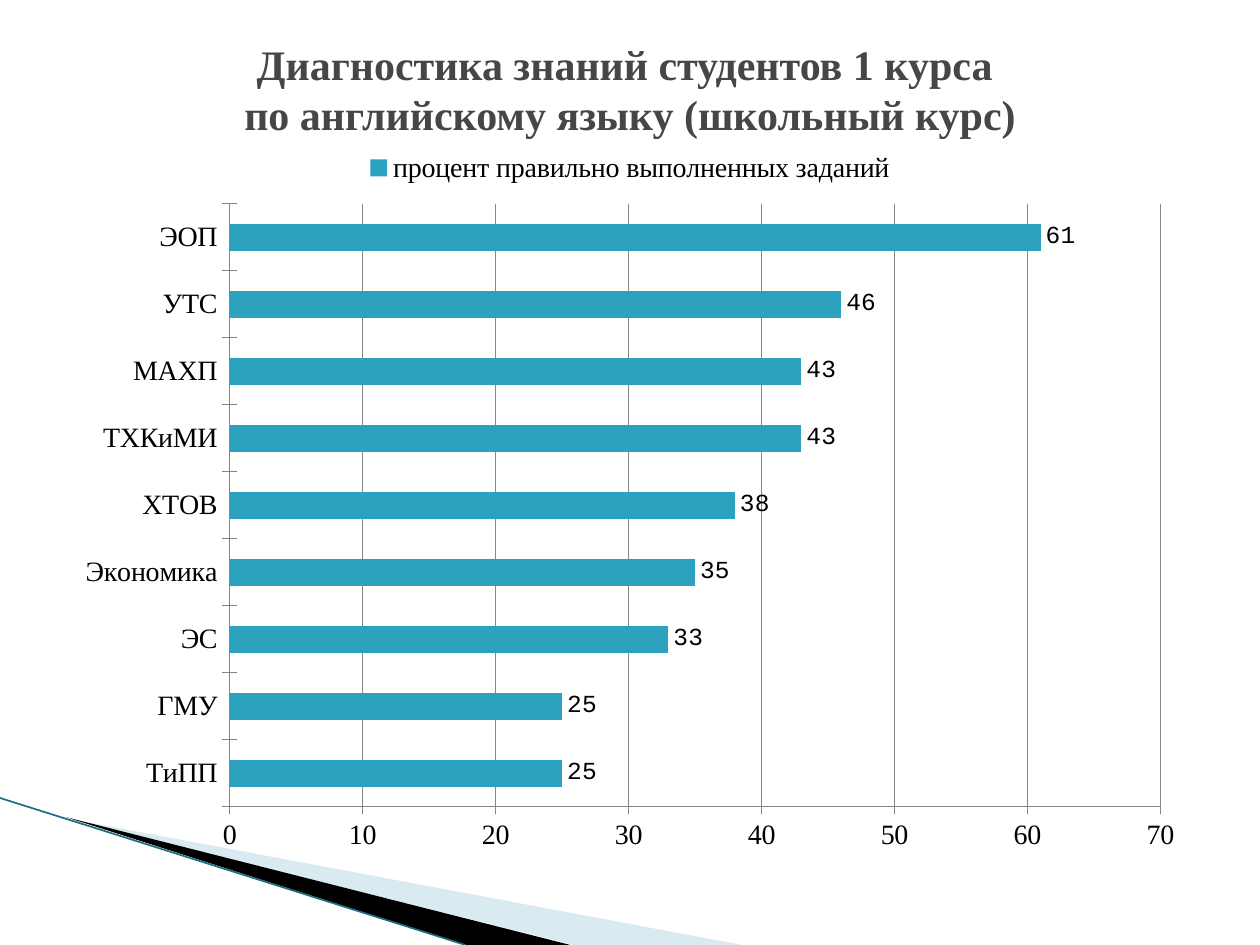
from dataclasses import dataclass
from lxml.etree import SubElement as Sub
from pptx import Presentation
from pptx.chart.data import CategoryChartData as Data
from pptx.dml.color import RGBColor as Rgb
from pptx.enum.chart import XL_CHART_TYPE as Kind, XL_LABEL_POSITION as Spot
from pptx.enum.chart import XL_LEGEND_POSITION as Side, XL_TICK_MARK as Tick
from pptx.enum.shapes import MSO_CONNECTOR as Link
from pptx.enum.text import MSO_ANCHOR as Anchor, PP_ALIGN as Align
from pptx.oxml.ns import qn
from pptx.util import Pt


@dataclass(frozen=True)
class Theme:
    """Hold the colours, fonts and type sizes."""
    ink: str = "000000"
    head: str = "464646"
    bar: str = "2DA2BF"
    grid: str = "868686"
    pale: str = "A0CBDC"
    edge: str = "1B6F83"
    serif: str = "Times New Roman"
    mono: str = "Courier New"
    title: int = 24
    axis: int = 16
    label: int = 14
    base: int = 18


THEME = Theme()
TITLE = "Диагностика знаний студентов 1 курса \vпо английскому языку (школьный курс)"
SERIES = "процент правильно выполненных заданий"
SCORES = {"ТиПП": 25, "ГМУ": 25, "ЭС": 33, "Экономика": 35, "ХТОВ": 38,
          "ТХКиМИ": 43, "МАХП": 43, "УТС": 46, "ЭОП": 61}


def style(font, name, size, color=THEME.ink, bold=False):
    """Set the face, size, colour and weight of a font."""
    font.name, font.size, font.bold = name, Pt(size), bold
    font.color.rgb = Rgb.from_string(color)


def add_wedge(slide, box, points, color, alpha=None):
    """Draw a filled wedge with its points relative to the box."""
    left, top = box[:2]
    spots = [(Pt(left + x), Pt(top + y)) for x, y in points]
    form = slide.shapes.build_freeform(*spots[0])
    form.add_line_segments(spots[1:], close=True)
    shape = form.convert_to_shape()
    shape.shadow.inherit = False
    shape.line.fill.background()
    shape.fill.solid()
    shape.fill.fore_color.rgb = Rgb.from_string(color)
    if alpha:
        tint = shape.fill._xPr.find(".//" + qn("a:srgbClr"))
        Sub(tint, qn("a:alpha")).set("val", str(alpha * 1000))


def add_corner(slide, box):
    """Draw the two wedges and the edge line of the lower corner."""
    left, top, width, height = box
    add_wedge(slide, box, [(40, 12), (width, height), (328, height)], THEME.pale, 40)
    add_wedge(slide, box, [(38, 11), (326, height), (266, height)], THEME.ink)
    line = slide.shapes.add_connector(
        Link.STRAIGHT, Pt(left), Pt(top), Pt(left + 266), Pt(top + height))
    line.line.color.rgb = Rgb.from_string(THEME.edge)
    line.line.width = Pt(0.95)
    Sub(line._element.spPr, qn("a:effectLst"))


def add_title(slide, box):
    """Place the heading in the title placeholder."""
    title = slide.shapes.title
    title.left, title.top, title.width, title.height = map(Pt, box)
    frame = title.text_frame
    frame.text = TITLE
    frame.word_wrap = True
    frame.vertical_anchor = Anchor.MIDDLE
    para = frame.paragraphs[0]
    para.alignment = Align.CENTER
    for run in para.runs:
        style(run.font, THEME.serif, THEME.title, THEME.head, True)


def add_scores(slide, box):
    """Place the bar chart of scores."""
    data = Data()
    data.categories = SCORES.keys()
    data.add_series(SERIES, SCORES.values())
    chart = slide.shapes.add_chart(Kind.BAR_CLUSTERED, *map(Pt, box), data).chart
    style(chart.font, THEME.mono, THEME.base)
    chart.has_title = False
    chart.has_legend = True
    chart.legend.position = Side.TOP
    chart.legend.include_in_layout = False
    style(chart.legend.font, THEME.serif, THEME.axis)
    gray = Rgb.from_string(THEME.grid)
    for axis in (chart.category_axis, chart.value_axis):
        axis.major_tick_mark = Tick.CROSS
        axis.minor_tick_mark = Tick.NONE
        axis.format.line.color.rgb = gray
        style(axis.tick_labels.font, THEME.serif, THEME.axis)
    scale = chart.value_axis
    scale.minimum_scale, scale.maximum_scale, scale.major_unit = 0, 70, 10
    scale.has_major_gridlines = True
    scale.major_gridlines.format.line.color.rgb = gray
    plot = chart.plots[0]
    plot.gap_width = 150
    plot.vary_by_categories = False
    bars = plot.series[0]
    bars.format.fill.solid()
    bars.format.fill.fore_color.rgb = Rgb.from_string(THEME.bar)
    labels = bars.data_labels
    labels.show_value = True
    labels.position = Spot.OUTSIDE_END
    style(labels.font, THEME.mono, THEME.label)


def main():
    """Build the slide and save it."""
    deck = Presentation()
    deck.slide_width, deck.slide_height = Pt(720), Pt(540)
    slide = deck.slides.add_slide(deck.slide_layouts[5])
    add_corner(slide, (0, 456, 424, 84))
    add_scores(slide, (36, 78.5, 648, 416))
    add_title(slide, (36, 11.5, 648, 78.5))
    deck.save("out.pptx")


if __name__ == "__main__":
    main()
